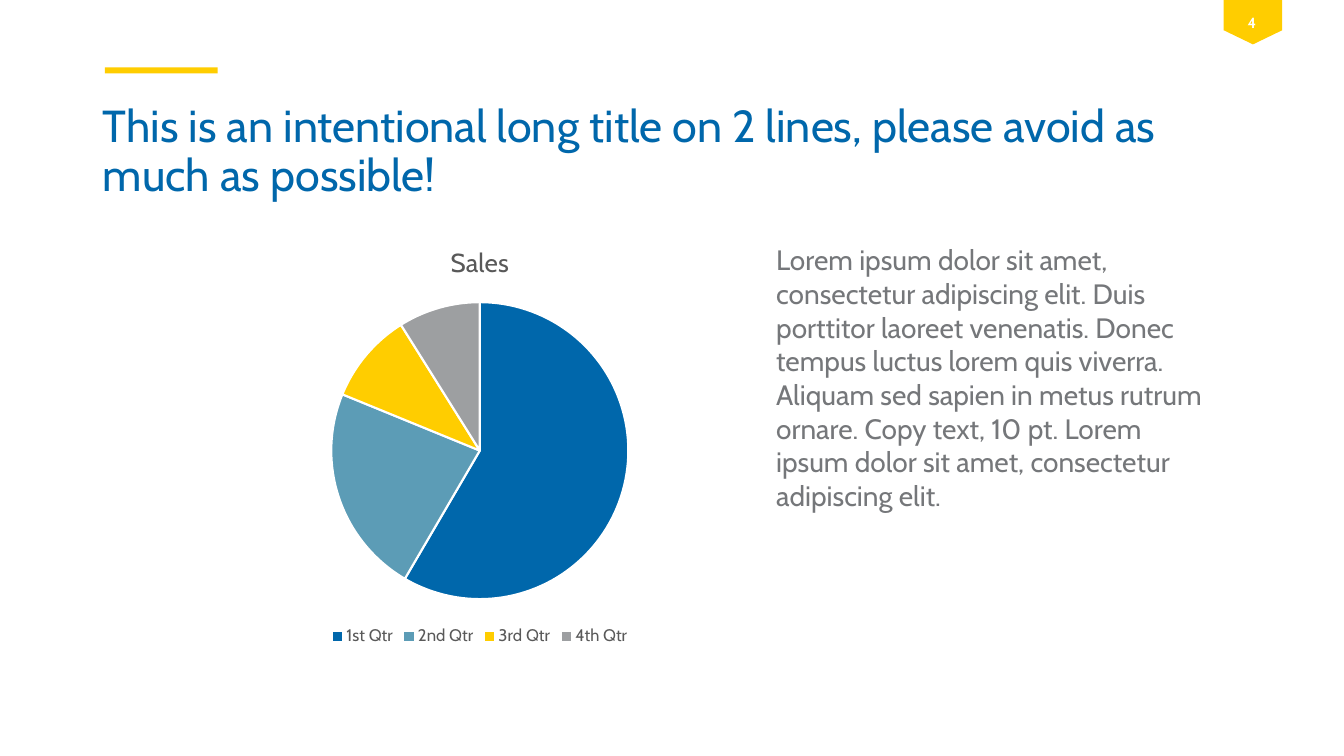
"""Builds a slide with a long title, a pie chart of sales and a copy text."""
from lxml import etree
from pptx import Presentation
from pptx import util as u
from pptx.chart.data import CategoryChartData
from pptx.dml.color import RGBColor
from pptx.enum import chart as charts, shapes, text
from pptx.oxml import parse_xml
from pptx.oxml.ns import nsdecls, qn

FONT = "Cabin"
BLUE = RGBColor(0x00, 0x67, 0xAB)
TEAL = RGBColor(0x5C, 0x9C, 0xB6)
YELLOW = RGBColor(0xFF, 0xCD, 0x00)
SILVER = RGBColor(0x9D, 0x9F, 0xA1)
GREY = RGBColor(0x75, 0x77, 0x7A)
DARK = RGBColor(0x59, 0x59, 0x59)
WHITE = RGBColor(0xFF, 0xFF, 0xFF)

WIDTH, HEIGHT = u.Inches(13.33), u.Inches(7.5)
SALES = {"1st Qtr": (59, BLUE), "2nd Qtr": (23, TEAL),
         "3rd Qtr": (10, YELLOW), "4th Qtr": (9, SILVER)}
TITLE = ("This is an intentional long title on 2 lines, "
         "please avoid as much as possible!")
COPY = ("Lorem ipsum dolor sit amet, consectetur adipiscing elit. Duis "
        "porttitor laoreet venenatis. Donec tempus luctus lorem quis viverra. "
        "Aliquam sed sapien in metus rutrum ornare. Copy text, 10 pt. Lorem "
        "ipsum dolor sit amet, consectetur adipiscing elit.")


def area(left, top, width, height):
    """Turn percentages of the slide into left, top, width and height."""
    return (int(WIDTH * left / 100), int(HEIGHT * top / 100),
            int(WIDTH * width / 100), int(HEIGHT * height / 100))


def style(font, size, color, bold=False):
    """Format a font in the slide's typeface."""
    font.name, font.size, font.bold = FONT, u.Pt(size), bold
    font.color.rgb = color


def write(holder, words, size, color, bold=False, align=text.PP_ALIGN.LEFT,
          spacing=1.0, before=0, anchor=text.MSO_ANCHOR.TOP):
    """Put one formatted paragraph without a bullet into a shape."""
    frame = holder.text_frame
    frame.word_wrap = True
    frame.auto_size = text.MSO_AUTO_SIZE.NONE
    frame.vertical_anchor = anchor
    paragraph = frame.paragraphs[0]
    paragraph.alignment = align
    paragraph.line_spacing = spacing
    paragraph.space_before = u.Pt(before)
    properties = paragraph._p.get_or_add_pPr()
    properties.set("marL", "0")
    properties.set("indent", "0")
    etree.SubElement(properties, qn("a:buNone"))
    run = paragraph.add_run()
    run.text = words
    style(run.font, size, color, bold)


def fill_placeholder(placeholder, box, words, **look):
    """Move a placeholder and write its text."""
    (placeholder.left, placeholder.top,
     placeholder.width, placeholder.height) = area(*box)
    write(placeholder, words, **look)


def add_block(slide, kind, box, rotation=0):
    """Draw a plain yellow shape."""
    block = slide.shapes.add_shape(kind, *area(*box))
    block.rotation = rotation
    block.shadow.inherit = False
    block.fill.solid()
    block.fill.fore_color.rgb = YELLOW
    block.line.fill.background()


def add_page_tab(slide, number):
    """Draw the pointed tab with the page number."""
    left, width, fold = 91.05, 4.35, 4
    add_block(slide, shapes.MSO_SHAPE.ISOSCELES_TRIANGLE,
              (left, fold, width, 1.87), rotation=180)
    add_block(slide, shapes.MSO_SHAPE.RECTANGLE, (left, 0, width, fold))
    label = slide.shapes.add_textbox(*area(90.6, 1.07, 5.1, 3.73))
    write(label, number, size=10.5, color=WHITE, bold=True,
          align=text.PP_ALIGN.CENTER, anchor=text.MSO_ANCHOR.MIDDLE)


def fix_plot(chart, **shares):
    """Set the inner plot area as shares of the chart."""
    values = "".join(f'<c:{key} val="{share}"/>' for key, share in shares.items())
    layout = parse_xml(
        f'<c:layout {nsdecls("c")}><c:manualLayout><c:layoutTarget val="inner"/>'
        f'<c:xMode val="edge"/><c:yMode val="edge"/>{values}'
        '</c:manualLayout></c:layout>')
    plot_area = chart._chartSpace.chart.plotArea
    for old in plot_area.findall(qn("c:layout")):
        plot_area.remove(old)
    plot_area.insert(0, layout)


def add_sales_pie(slide, box):
    """Add the pie of quarterly sales with its title and legend."""
    data = CategoryChartData()
    data.categories = list(SALES)
    data.add_series("Sales", [value for value, _ in SALES.values()])
    chart = slide.shapes.add_chart(
        charts.XL_CHART_TYPE.PIE, *area(*box), data).chart
    style(chart.font, 10, DARK)
    chart.has_title = True
    chart.chart_title.include_in_layout = False
    heading = chart.chart_title.text_frame.paragraphs[0].add_run()
    heading.text = "Sales"
    style(heading.font, 18.6, DARK)
    chart.has_legend = True
    chart.legend.position = charts.XL_LEGEND_POSITION.BOTTOM
    chart.legend.include_in_layout = False
    style(chart.legend.font, 12, DARK)
    pie = chart.plots[0]
    pie.vary_by_categories = True
    for index, (_, color) in enumerate(SALES.values()):
        slice_format = pie.series[0].points[index].format
        slice_format.fill.solid()
        slice_format.fill.fore_color.rgb = color
        slice_format.line.color.rgb = WHITE
        slice_format.line.width = u.Pt(1.5)
    fix_plot(chart, x=0.19, y=0.18, w=0.62, h=0.7)


def main():
    """Build the slide and save it."""
    deck = Presentation()
    deck.slide_width, deck.slide_height = WIDTH, HEIGHT
    slide = deck.slides.add_slide(deck.slide_layouts[1])
    title, copy_text = slide.placeholders
    add_block(slide, shapes.MSO_SHAPE.RECTANGLE, (7.8, 8.93, 8.4, 0.8))
    add_page_tab(slide, "4")
    add_sales_pie(slide, (17.63, 29.87, 36.15, 56.13))
    fill_placeholder(copy_text, (57, 31.47, 34.5, 56.13), COPY,
                     size=20, color=GREY, before=10)
    fill_placeholder(title, (6.9, 13.07, 84.7, 6), TITLE,
                     size=32, color=BLUE, spacing=0.9)
    deck.save("out.pptx")


if __name__ == "__main__":
    main()
